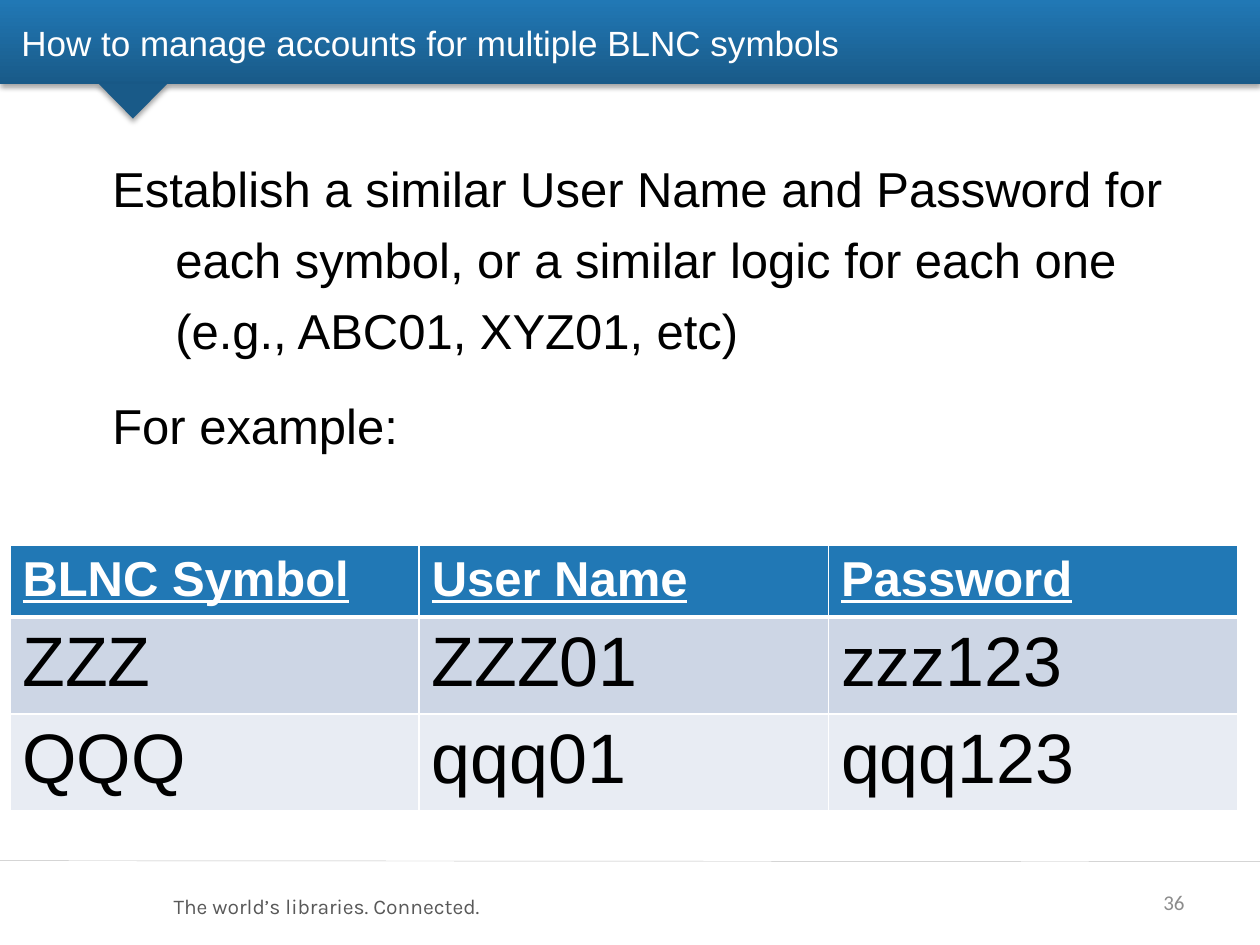
from lxml.etree import SubElement
from pptx import Presentation
from pptx.dml.color import RGBColor
from pptx.enum.shapes import MSO_CONNECTOR, MSO_SHAPE as SHAPE
from pptx.enum.text import MSO_ANCHOR as ANCHOR, PP_ALIGN as ALIGN
from pptx.oxml import parse_xml
from pptx.oxml.ns import nsdecls, qn
from pptx.util import Cm, Pt

BLUE, NAVY, WHITE, BLACK = "2178B5", "195A88", "FFFFFF", "000000"


def rgb(value):
    return RGBColor.from_string(value)


def style(p, size, color, name="Arial"):
    """Format every run of a paragraph."""
    for r in p.runs:
        r.font.size = Pt(size)
        r.font.name = name
        r.font.color.rgb = rgb(color)


prs = Presentation()
prs.slide_width, prs.slide_height = Cm(25.4), Cm(19.05)
s = prs.slides.add_slide(prs.slide_layouts[1])
title, body = s.placeholders

# Footer rule
line = s.shapes.add_connector(MSO_CONNECTOR.STRAIGHT, 0, Cm(17.35), Cm(25.4), Cm(17.37))
line.line.color.rgb = rgb("BFBFBF")
line.line.width = Pt(0.25)
SubElement(line._element.spPr, qn("a:effectLst"))

# Header band with its pointer
band = s.shapes.add_shape(SHAPE.RECTANGLE, 0, 0, Cm(25.4), Cm(1.7))
band.fill.gradient()
band.fill.gradient_angle = 90
for stop, color, position in zip(band.fill.gradient_stops, (NAVY, BLUE), (0, 1)):
    stop.color.rgb = rgb(color)
    stop.position = position
pointer = s.shapes.add_shape(SHAPE.ISOSCELES_TRIANGLE, Cm(1.98), Cm(1.68), Cm(1.4), Cm(0.71))
pointer.rotation = 180
pointer.fill.solid()
pointer.fill.fore_color.rgb = rgb(NAVY)
for sp in (band, pointer):
    sp.line.fill.background()
    sp._element.spPr.append(parse_xml(
        f'<a:effectLst {nsdecls("a")}><a:outerShdw blurRad="{Pt(3.1)}" dist="{Pt(1.8)}" '
        'dir="5400000" rotWithShape="0"><a:srgbClr val="000000"><a:alpha val="35000"/>'
        '</a:srgbClr></a:outerShdw></a:effectLst>'))

# Title, brought in front of the band
s.shapes._spTree.append(title._element)
title.left, title.top, title.width, title.height = Cm(0.43), 0, Cm(23.7), Cm(1.7)
tf = title.text_frame
tf.text = "How to manage accounts for multiple BLNC symbols"
tf.margin_left = tf.margin_right = 0
tf.word_wrap = False
tf.vertical_anchor = ANCHOR.MIDDLE
tf.paragraphs[0].alignment = ALIGN.LEFT
style(tf.paragraphs[0], 20, WHITE)

# Body
s.shapes._spTree.append(body._element)
body.left, body.top, body.width, body.height = Cm(2.01), Cm(2.84), Cm(22.56), Cm(14.4)
tf = body.text_frame
tf.text = ("Establish a similar User Name and Password for each symbol, "
           "or a similar logic for each one (e.g., ABC01, XYZ01, etc)\nFor example:")
for i, p in enumerate(tf.paragraphs):
    pPr = p._p.get_or_add_pPr()
    pPr.set("marL", str(Cm(1.27)))
    pPr.set("indent", str(-Cm(1.27)))
    SubElement(pPr, qn("a:buNone"))
    p.line_spacing = 1.2
    p.space_before = Pt(14 if i else 0)
    style(p, 28, BLACK)

# Footer texts
for text, left, top, width, color, font, align in (
    ("The world’s libraries. Connected.", 3.25, 17.86, 7.14, "595959", "Karla", ALIGN.LEFT),
    ("36", 18.85, 17.78, 5.28, "8C8C8C", "Calibri", ALIGN.RIGHT),
):
    tf = s.shapes.add_textbox(Cm(left), Cm(top), Cm(width), Cm(0.8)).text_frame
    tf.word_wrap = True
    tf.vertical_anchor = ANCHOR.MIDDLE
    tf.text = text
    tf.paragraphs[0].alignment = align
    style(tf.paragraphs[0], 12, color, font)

# Accounts table
accounts = (
    ("BLNC Symbol", "User Name", "Password"),
    ("ZZZ", "ZZZ01", "zzz123"),
    ("QQQ", "qqq01", "qqq123"),
)
table = s.shapes.add_table(3, 3, Cm(0.2), Cm(11), Cm(24.75), Cm(4.9)).table
for row, height in zip(table.rows, (1.3, 1.8, 1.8)):
    row.height = Cm(height)
for i, (values, fill) in enumerate(zip(accounts, (BLUE, "CDD6E5", "E8ECF3"))):
    header = i == 0
    for j, value in enumerate(values):
        cell = table.cell(i, j)
        tcPr = cell._tc.get_or_add_tcPr()
        for side in "LRTB":
            thick = (header and side == "B") or (i == 1 and side == "T")
            ln = SubElement(tcPr, qn(f"a:ln{side}"), w=str(Pt(3 if thick else 1)))
            SubElement(SubElement(ln, qn("a:solidFill")), qn("a:srgbClr"), val=WHITE)
        cell.fill.solid()
        cell.fill.fore_color.rgb = rgb(fill)
        cell.text = value
        p = cell.text_frame.paragraphs[0]
        style(p, 28 if header else 40, WHITE if header else BLACK)
        p.runs[0].font.bold = p.runs[0].font.underline = header

prs.save("out.pptx")
